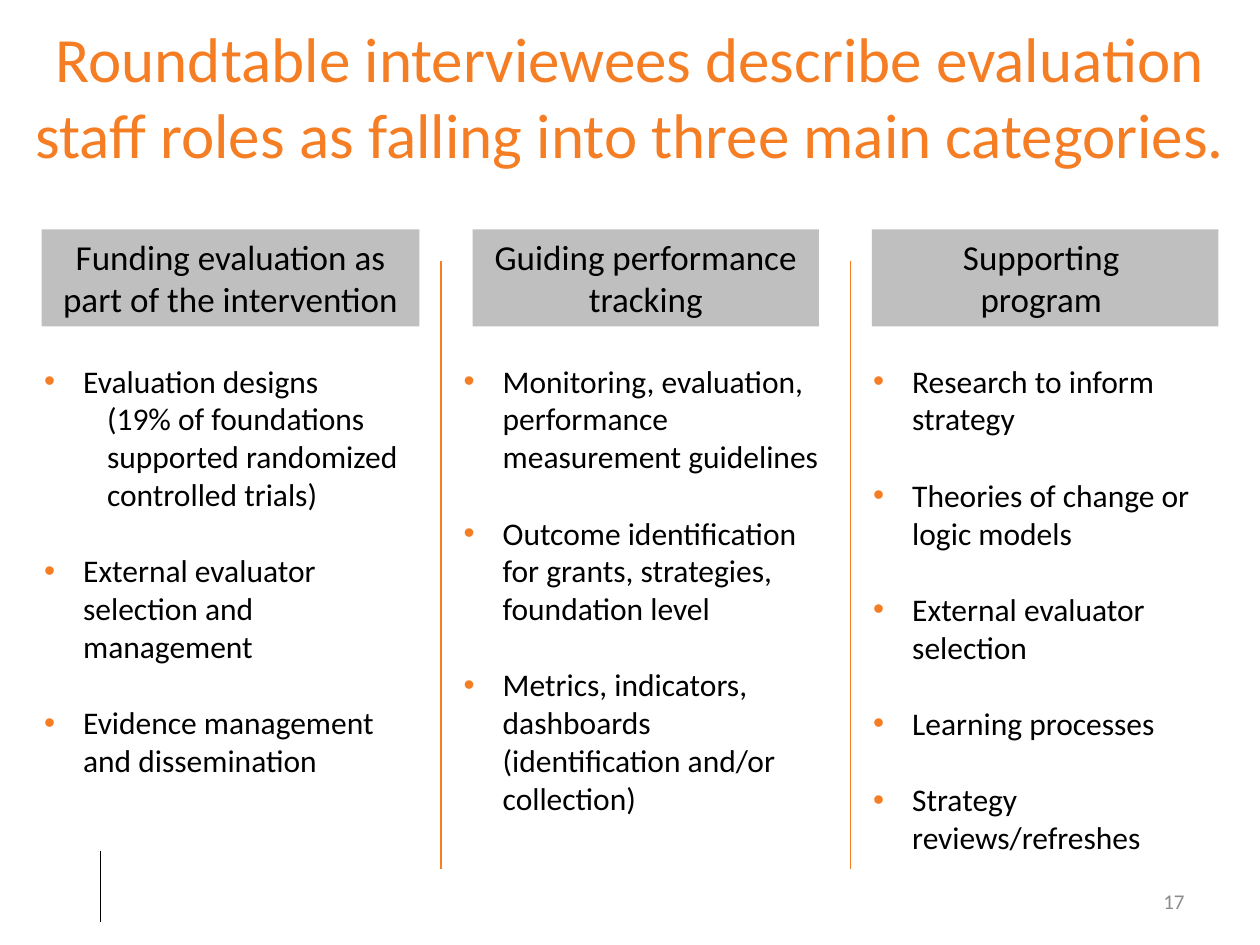
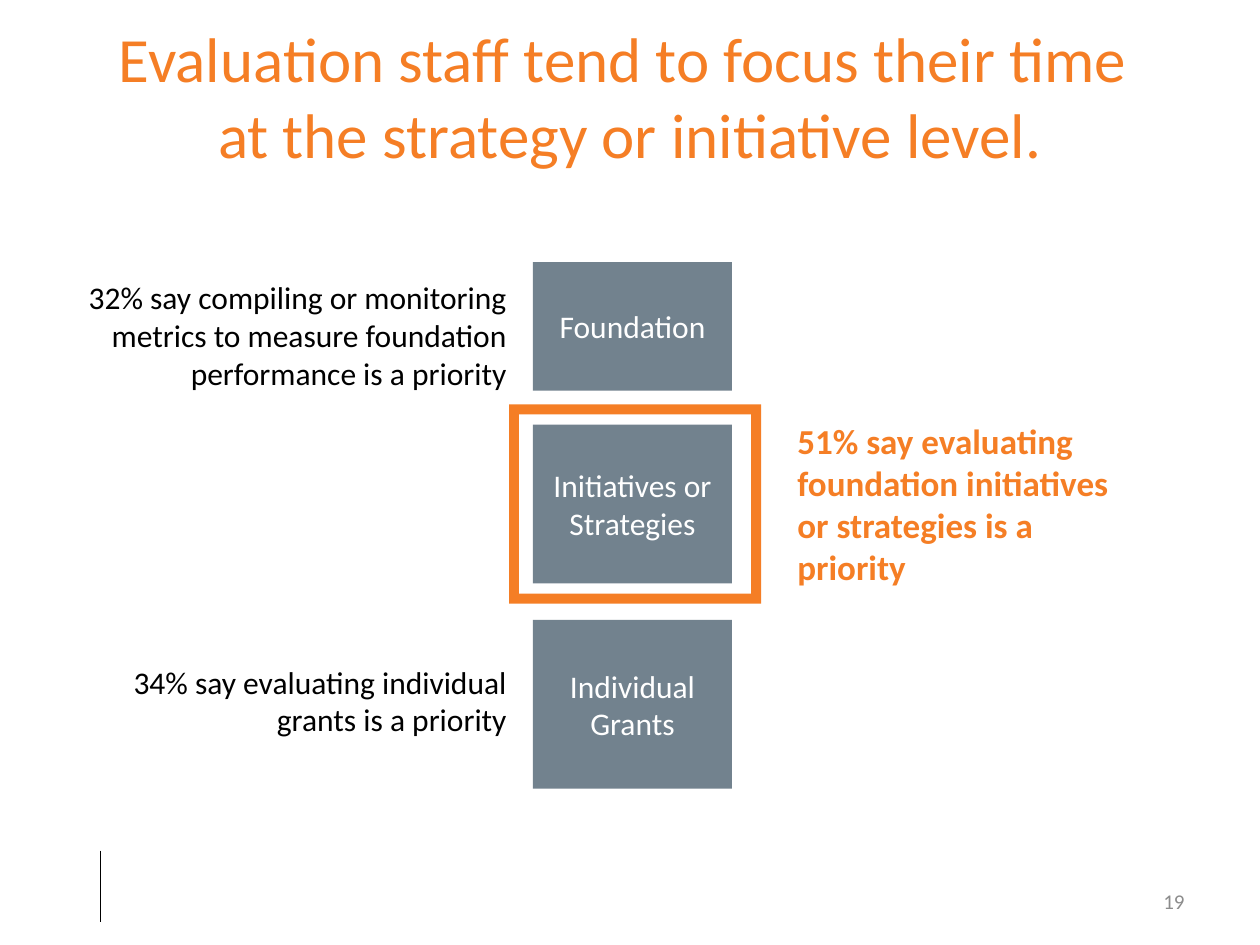
import pptx
import pptx.util
import pptx.dml.color
import pptx.enum.shapes
import pptx.enum.text
import pptx.oxml.ns
import lxml.etree

Inches = pptx.util.Inches
Pt = pptx.util.Pt
ALIGN = pptx.enum.text.PP_ALIGN
ANCHOR = pptx.enum.text.MSO_ANCHOR
SHAPE = pptx.enum.shapes.MSO_SHAPE

ORANGE = "F57E25"
BLACK = "000000"
WHITE = "FFFFFF"
SLATE = "72828E"
HEADING_GREY = "BFBFBF"
NUMBER_GREY = "8C8C8C"


def color(hex_string):
    return pptx.dml.color.RGBColor.from_string(hex_string)


def write(shape, text, size, hex_string, align, anchor=ANCHOR.TOP, bold=False):
    """Fill a shape with text in one uniform style."""
    frame = shape.text_frame
    frame.text = text
    frame.word_wrap = True
    frame.auto_size = pptx.enum.text.MSO_AUTO_SIZE.NONE
    frame.vertical_anchor = anchor
    for paragraph in frame.paragraphs:
        paragraph.alignment = align
        for run in paragraph.runs:
            run.font.name = "Calibri"
            run.font.size = Pt(size)
            run.font.bold = bold
            run.font.color.rgb = color(hex_string)


presentation = pptx.Presentation()
presentation.slide_width = Inches(10)
presentation.slide_height = Inches(7.5)
comparison_layout = presentation.slide_layouts[4]
title_layout = presentation.slide_layouts[5]
roles_slide = presentation.slides.add_slide(comparison_layout)
focus_slide = presentation.slides.add_slide(title_layout)

# Thin vertical rules: slide, x, top, bottom, colour, width
rules = [
    (roles_slide, 0.8, 6.75, 7.32, BLACK, 0.5),
    (focus_slide, 0.8, 6.75, 7.32, BLACK, 0.5),
    (roles_slide, 3.5, 2.07, 6.9, ORANGE, 1),
    (roles_slide, 6.75, 2.07, 6.9, ORANGE, 1),
]
for slide, x, top, bottom, hex_string, width in rules:
    rule = slide.shapes.add_connector(
        pptx.enum.shapes.MSO_CONNECTOR.STRAIGHT,
        Inches(x), Inches(top), Inches(x), Inches(bottom))
    rule.line.color.rgb = color(hex_string)
    rule.line.width = Pt(width)
    lxml.etree.SubElement(rule._element.spPr, pptx.oxml.ns.qn("a:effectLst"))

# Titles and slide numbers
headlines = [
    (roles_slide, "17", "Roundtable interviewees describe evaluation staff roles "
                        "as falling into three main categories."),
    (focus_slide, "19", "Evaluation staff tend to focus their time \v"
                        "at the strategy or initiative level."),
]
for slide, number, headline in headlines:
    title = slide.shapes.title
    title.left, title.top = Inches(0), Inches(0.18)
    title.width, title.height = Inches(10), Inches(1.15)
    write(title, headline, 36, ORANGE, ALIGN.CENTER, ANCHOR.MIDDLE)
    number_box = slide.shapes.add_textbox(
        Inches(7.17), Inches(6.95), Inches(2.33), Inches(0.4))
    write(number_box, number, 12, NUMBER_GREY, ALIGN.RIGHT, ANCHOR.MIDDLE)

# Three role columns: heading, heading left and width, list left, width and height
role_columns = [
    ("Funding evaluation as part of the intervention", 0.33, 3, 0.25, 3.08, 3.43, [
        "Evaluation designs",
        "(19% of foundations supported randomized controlled trials)",
        "External evaluator selection and management",
        "Evidence management and dissemination"]),
    ("Guiding performance tracking", 3.75, 2.75, 3.58, 3.08, 4.34, [
        "Monitoring, evaluation, performance measurement guidelines",
        "Outcome identification for grants, strategies, foundation level",
        "Metrics, indicators, dashboards (identification and/or collection)"]),
    ("Supporting \nprogram ", 6.92, 2.75, 6.83, 2.92, 4.34, [
        "Research to inform strategy",
        "Theories of change or logic models",
        "External evaluator selection",
        "Learning processes",
        "Strategy reviews/refreshes"]),
]
bodies = [shape for shape in roles_slide.placeholders
          if 1 <= shape.placeholder_format.idx <= 4]
spare_body = bodies.pop()
spare_body._element.getparent().remove(spare_body._element)

for body, column in zip(bodies, role_columns):
    heading, heading_left, heading_width, left, width, height, items = column
    heading_box = roles_slide.shapes.add_shape(
        SHAPE.RECTANGLE, Inches(heading_left), Inches(1.82),
        Inches(heading_width), Inches(0.77))
    heading_box.shadow.inherit = False
    heading_box.fill.solid()
    heading_box.fill.fore_color.rgb = color(HEADING_GREY)
    heading_box.line.fill.background()
    write(heading_box, heading, 20, BLACK, ALIGN.CENTER)

    body.left, body.top = Inches(left), Inches(2.82)
    body.width, body.height = Inches(width), Inches(height)
    write(body, "\n".join(items), 18, BLACK, ALIGN.LEFT)
    for index, paragraph in enumerate(body.text_frame.paragraphs):
        is_detail = paragraph.text.startswith("(")
        paragraph.level = 1 if is_detail else 0
        paragraph.space_before = Pt(0 if index == 0 or is_detail else 22)
        properties = paragraph._p.get_or_add_pPr()
        properties.set("marL", str(Inches(0.5 if is_detail else 0.31)))
        properties.set("indent", str(Inches(0 if is_detail else -0.31)))
        if is_detail:
            lxml.etree.SubElement(properties, pptx.oxml.ns.qn("a:buNone"))
        else:
            bullet_color = lxml.etree.SubElement(properties, pptx.oxml.ns.qn("a:buClr"))
            lxml.etree.SubElement(
                bullet_color, pptx.oxml.ns.qn("a:srgbClr"), val=ORANGE)
            lxml.etree.SubElement(
                properties, pptx.oxml.ns.qn("a:buFont"), typeface="Arial")
            lxml.etree.SubElement(properties, pptx.oxml.ns.qn("a:buChar"), char="•")

# Stack of levels, with the middle one framed
level_blocks = [
    (SHAPE.RECTANGLE, "Foundation", 4.23, 2.08, 1.58, 1.02, SLATE),
    (SHAPE.RECTANGLE, "Initiatives or Strategies", 4.23, 3.37, 1.58, 1.26, SLATE),
    (SHAPE.RECTANGLE, "Individual Grants", 4.23, 4.92, 1.58, 1.34, SLATE),
    (SHAPE.FRAME, "", 4.04, 3.21, 2, 1.58, ORANGE),
]
for preset, label, left, top, width, height, hex_string in level_blocks:
    block = focus_slide.shapes.add_shape(
        preset, Inches(left), Inches(top), Inches(width), Inches(height))
    block.shadow.inherit = False
    block.fill.solid()
    block.fill.fore_color.rgb = color(hex_string)
    block.line.fill.background()
    if preset == SHAPE.FRAME:
        block.adjustments[0] = 0.05
    else:
        write(block, label, 18, WHITE, ALIGN.CENTER, ANCHOR.MIDDLE)

# Survey findings beside the levels
findings = [
    ("32% say compiling or monitoring metrics to measure foundation performance "
     "is a priority", 0.5, 2.16, 3.62, 1.01, 18, BLACK, ALIGN.RIGHT, False),
    ("51% say evaluating foundation initiatives or strategies is a priority",
     6.23, 3.28, 2.75, 1.45, 20, ORANGE, ALIGN.LEFT, True),
    ("34% say evaluating individual grants is a priority",
     0.87, 5.21, 3.25, 0.71, 18, BLACK, ALIGN.RIGHT, False),
]
for text, left, top, width, height, size, hex_string, align, bold in findings:
    finding = focus_slide.shapes.add_textbox(
        Inches(left), Inches(top), Inches(width), Inches(height))
    write(finding, text, size, hex_string, align, bold=bold)

presentation.save("out.pptx")
